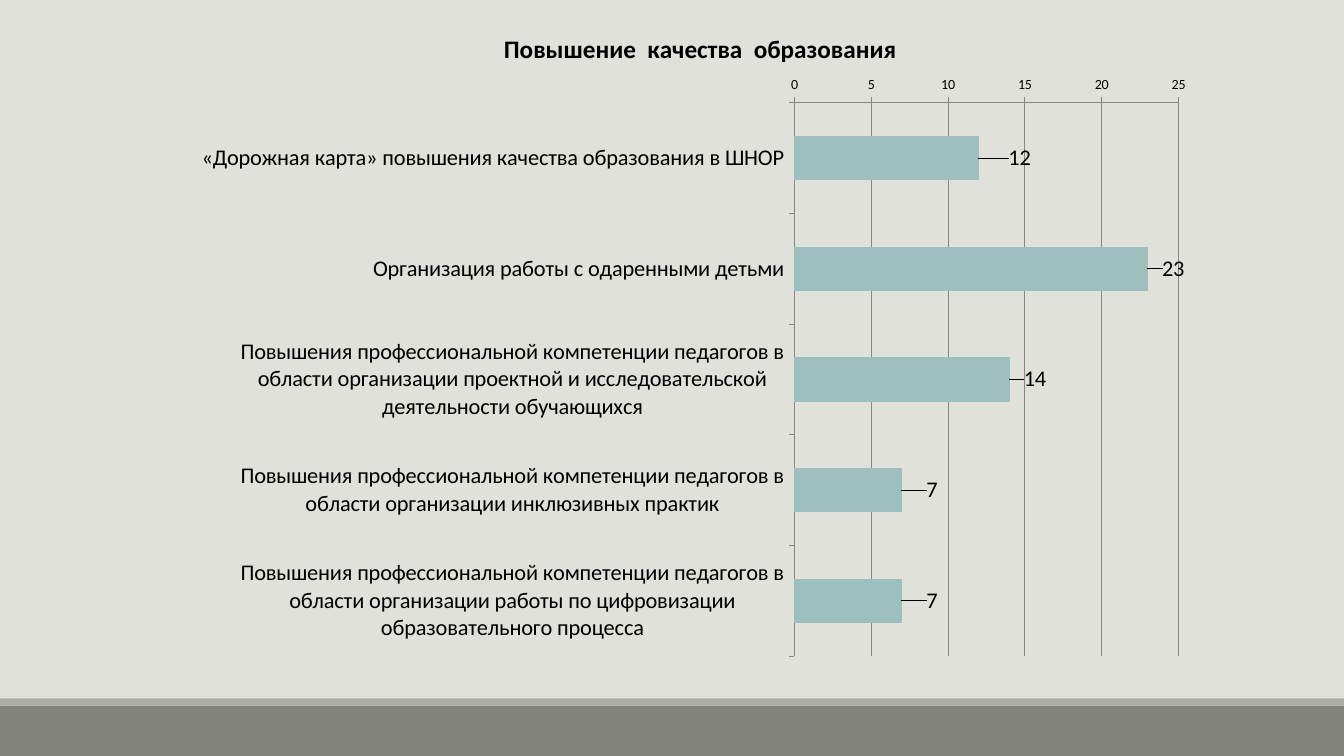
from dataclasses import dataclass

from lxml import etree
from pptx import Presentation
from pptx.chart.data import CategoryChartData
from pptx.dml.color import RGBColor
from pptx.enum.chart import XL_CHART_TYPE, XL_LABEL_POSITION, XL_TICK_MARK
from pptx.enum.shapes import MSO_SHAPE
from pptx.oxml import parse_xml
from pptx.oxml.ns import nsdecls, qn
from pptx.util import Inches, Pt

FONT = "Calibri"
BLACK, GRID = "000000", "868686"


@dataclass
class Band:
    top: float
    height: float
    color: str


@dataclass
class Topic:
    name: str
    count: int
    label_shift: float  # extra gap after the bar, as a share of the chart width


BANDS = [Band(7, 0.5, "82847C"), Band(6.93, 0.07, "ACADA8")]
TRAINING = "Повышения профессиональной компетенции педагогов в области организации "
TOPICS = [
    Topic("«Дорожная карта» повышения качества образования в ШНОР", 12, 0.025),
    Topic("Организация работы с одаренными детьми", 23, 0.01),
    Topic(TRAINING + "проектной и исследовательской деятельности обучающихся", 14, 0.01),
    Topic(TRAINING + "инклюзивных практик", 7, 0.02),
    Topic(TRAINING + "работы по цифровизации образовательного процесса", 7, 0.02),
]


def rgb(color: str) -> RGBColor:
    return RGBColor.from_string(color)


def set_font(font, size: float, bold: bool = False) -> None:
    font.name, font.size, font.bold = FONT, Pt(size), bold
    font.color.rgb = rgb(BLACK)


def manual_layout(**settings) -> etree._Element:
    """Build a c:layout; settings must come in schema order."""
    parts = "".join(f'<c:{key} val="{value}"/>' for key, value in settings.items())
    return parse_xml(
        f'<c:layout {nsdecls("c")}><c:manualLayout>{parts}</c:manualLayout></c:layout>'
    )


def replace_layout(parent, layout, after: str | None = None) -> None:
    for old in parent.findall(qn("c:layout")):
        parent.remove(old)
    if after is None:
        parent.insert(0, layout)
    else:
        parent.find(qn(after)).addnext(layout)


def add_band(slide, band: Band) -> None:
    shape = slide.shapes.add_shape(
        MSO_SHAPE.RECTANGLE, 0, Inches(band.top), Inches(13.33), Inches(band.height)
    )
    shape.shadow.inherit = False
    shape.fill.solid()
    shape.fill.fore_color.rgb = rgb(band.color)
    shape.line.fill.background()


def style_axes(chart) -> None:
    for axis, size in ((chart.category_axis, 16), (chart.value_axis, 10)):
        axis.major_tick_mark = XL_TICK_MARK.OUTSIDE
        axis.minor_tick_mark = XL_TICK_MARK.NONE
        axis.format.line.color.rgb = rgb(GRID)
        axis.format.line.width = Pt(0.75)
        set_font(axis.tick_labels.font, size)
    chart.category_axis.reverse_order = True
    values = chart.value_axis
    values.minimum_scale, values.maximum_scale, values.major_unit = 0, 25, 5
    values.has_major_gridlines = True
    values.major_gridlines.format.line.color.rgb = rgb(GRID)
    values.major_gridlines.format.line.width = Pt(0.75)


def style_bars(chart) -> None:
    plot = chart.plots[0]
    plot.gap_width = 150
    plot.vary_by_categories = False
    bars = plot.series[0]
    bars.format.fill.solid()
    bars.format.fill.fore_color.rgb = rgb("9DBFBE")
    bars.data_labels.show_value = True
    set_font(bars.data_labels.font, 16)
    for index in range(len(TOPICS)):
        label = bars.points[index].data_label
        set_font(label.font, 16)
        label.position = XL_LABEL_POSITION.OUTSIDE_END
    for label, topic in zip(chart.element.iter(qn("c:dLbl")), TOPICS):
        replace_layout(label, manual_layout(x=topic.label_shift, y=0), "c:idx")


def add_topics_chart(slide) -> None:
    data = CategoryChartData()
    data.categories = [topic.name for topic in TOPICS]
    data.add_series("Series 1", [topic.count for topic in TOPICS])
    chart = slide.shapes.add_chart(
        XL_CHART_TYPE.BAR_CLUSTERED,
        Inches(1.8), 0, Inches(10.17), Inches(6.64), data,
    ).chart
    set_font(chart.font, 10)
    chart.has_legend = False
    chart.has_title = True
    heading = chart.chart_title.text_frame
    heading.text = "Повышение  качества  образования"
    set_font(heading.paragraphs[0].font, 18, bold=True)
    style_axes(chart)
    style_bars(chart)
    title = next(chart.element.iter(qn("c:title")))
    replace_layout(
        title, manual_layout(xMode="edge", yMode="edge", x=0.31, y=0.04), "c:tx"
    )
    plot_area = next(chart.element.iter(qn("c:plotArea")))
    replace_layout(plot_area, manual_layout(
        layoutTarget="inner", xMode="edge", yMode="edge",
        x=6.08 / 10.17, y=1.02 / 6.64, w=3.81 / 10.17, h=5.49 / 6.64,
    ))


def main() -> None:
    deck = Presentation()
    deck.slide_width, deck.slide_height = Inches(13.33), Inches(7.5)
    slide = deck.slides.add_slide(deck.slide_layouts[6])
    slide.background.fill.solid()
    slide.background.fill.fore_color.rgb = rgb("E1E1DB")
    for band in BANDS:
        add_band(slide, band)
    add_topics_chart(slide)
    deck.save("out.pptx")


if __name__ == "__main__":
    main()
